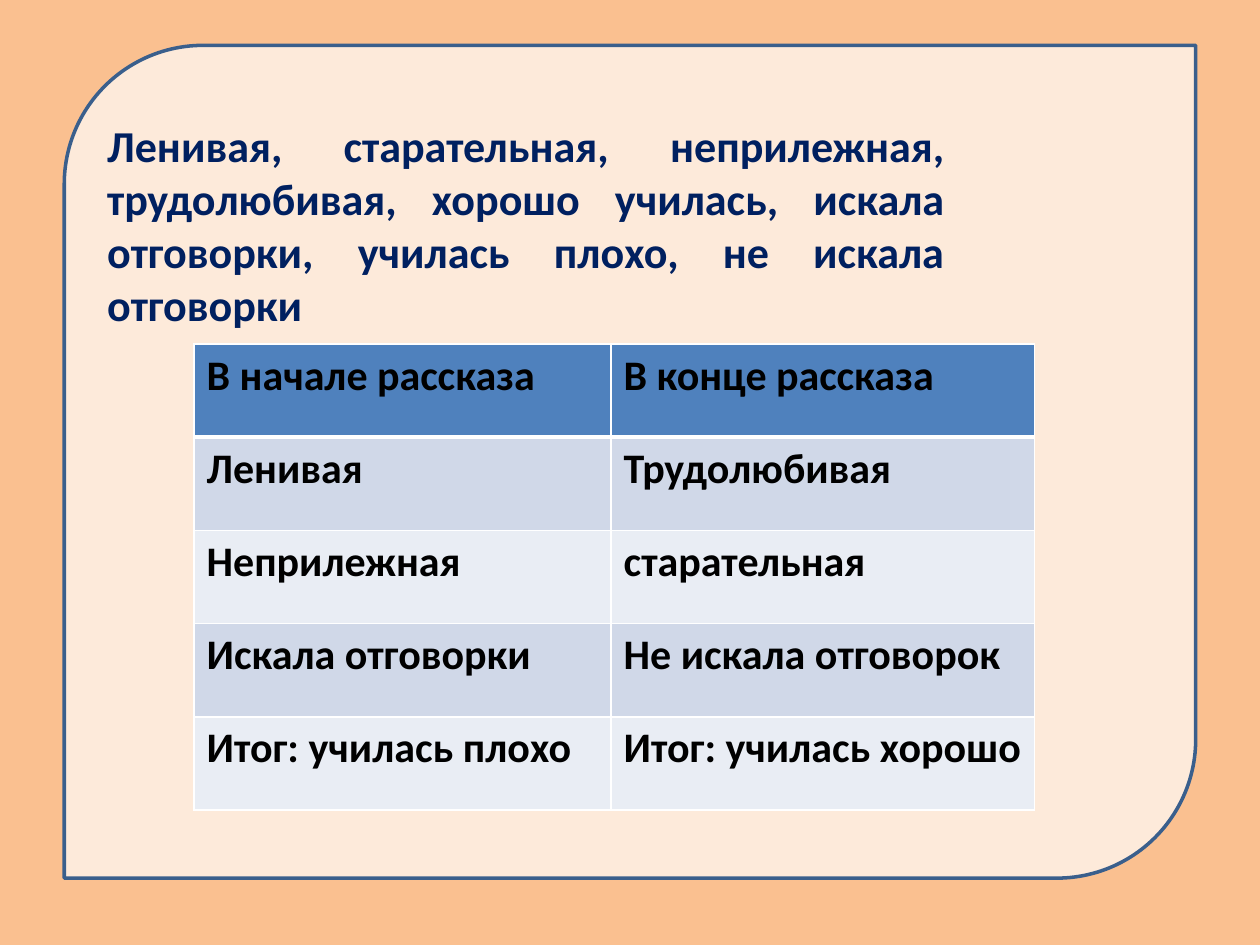
from dataclasses import dataclass

from lxml.etree import SubElement
from pptx import Presentation
from pptx.dml.color import RGBColor
from pptx.enum.shapes import MSO_SHAPE
from pptx.enum.text import MSO_ANCHOR, MSO_AUTO_SIZE, PP_ALIGN
from pptx.oxml.ns import qn
from pptx.slide import Slide
from pptx.table import _Cell
from pptx.util import Inches, Pt

FONT = "Calibri"
HEADER_FILL = "4F81BD"
BAND_FILLS = ("D0D8E8", "E9EDF4")
COL_WIDTHS = (3.31, 3.36)
ROW_HEIGHT = 0.74


@dataclass
class Box:
    left: float
    top: float
    width: float
    height: float

    def emu(self) -> tuple:
        return tuple(Inches(v) for v in (self.left, self.top, self.width, self.height))


@dataclass
class Row:
    start: str
    end: str


ROWS = (
    Row("В начале рассказа", "В конце рассказа"),
    Row("Ленивая", "Трудолюбивая"),
    Row("Неприлежная", "старательная"),
    Row("Искала отговорки", "Не искала отговорок"),
    Row("Итог: училась плохо", "Итог: училась хорошо"),
)


def paint(fill, color: str) -> None:
    fill.solid()
    fill.fore_color.rgb = RGBColor.from_string(color)


def set_font(font, size: float, color: str) -> None:
    font.name = FONT
    font.size = Pt(size)
    font.bold = True
    font.color.rgb = RGBColor.from_string(color)


def add_frame(slide: Slide, box: Box) -> None:
    sp = slide.shapes.add_shape(MSO_SHAPE.ROUND_2_DIAG_RECTANGLE, *box.emu())
    sp.shadow.inherit = False
    paint(sp.fill, "FDEADA")
    paint(sp.line.fill, "3A5F8C")
    sp.line.width = Pt(2)
    slide.shapes._spTree.insert(2, sp._element)


def set_title(slide: Slide, box: Box, text: str) -> None:
    sp = slide.shapes.title
    sp.left, sp.top, sp.width, sp.height = box.emu()
    tf = sp.text_frame
    tf.text = text
    tf.word_wrap = True
    tf.auto_size = MSO_AUTO_SIZE.NONE
    tf.vertical_anchor = MSO_ANCHOR.TOP
    tf.margin_top = Inches(0.26)
    p = tf.paragraphs[0]
    p.alignment = PP_ALIGN.JUSTIFY
    set_font(p.font, 25.2, "002060")


def add_borders(cell: _Cell, bottom: float, top: float) -> None:
    tc_pr = cell._tc.get_or_add_tcPr()
    for side, width in (("L", 1), ("R", 1), ("T", top), ("B", bottom)):
        ln = SubElement(tc_pr, qn(f"a:ln{side}"), w=str(Pt(width)))
        SubElement(SubElement(ln, qn("a:solidFill")), qn("a:srgbClr"), val="FFFFFF")


def fill_cell(cell: _Cell, text: str, row: int) -> None:
    add_borders(cell, bottom=3 if row == 0 else 1, top=3 if row == 1 else 1)
    paint(cell.fill, BAND_FILLS[(row - 1) % 2] if row else HEADER_FILL)
    cell.text = text
    set_font(cell.text_frame.paragraphs[0].font, 24, "000000")


def add_comparison(slide: Slide, left: float, top: float) -> None:
    box = Box(left, top, sum(COL_WIDTHS), ROW_HEIGHT * len(ROWS))
    table = slide.shapes.add_table(len(ROWS), len(COL_WIDTHS), *box.emu()).table
    for column, width in zip(table.columns, COL_WIDTHS):
        column.width = Inches(width)
    for i, row in enumerate(ROWS):
        for j, text in enumerate((row.start, row.end)):
            fill_cell(table.cell(i, j), text, i)


def main() -> None:
    prs = Presentation()
    prs.slide_width, prs.slide_height = Inches(10), Inches(7.5)
    slide = prs.slides.add_slide(prs.slide_layouts[5])
    paint(slide.background.fill, "FAC090")
    add_frame(slide, Box(0.51, 0.36, 8.98, 6.61))
    set_title(
        slide,
        Box(0.75, 0.68, 6.85, 1.73),
        "Ленивая, старательная, неприлежная, трудолюбивая, хорошо училась, "
        "искала отговорки, училась плохо, не искала отговорки",
    )
    add_comparison(slide, 1.54, 2.73)
    prs.save("out.pptx")


if __name__ == "__main__":
    main()
